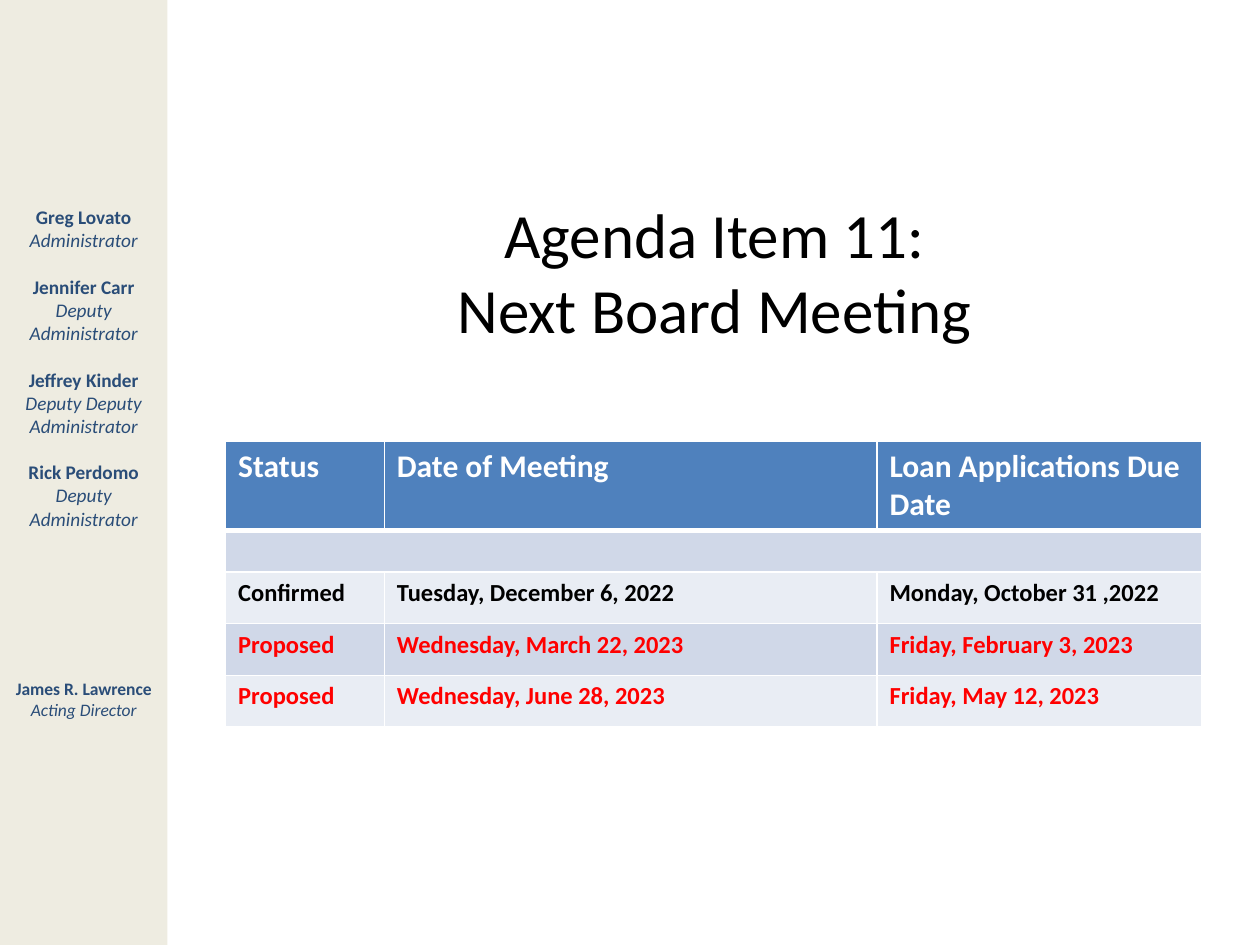
import pptx
import pptx.dml.color
import pptx.enum.text
import pptx.oxml
import pptx.oxml.ns
import pptx.util
from pptx.util import Inches

FONT = "Calibri"
NAVY, WHITE, BLACK, RED = "2A4D78", "FFFFFF", "000000", "FF0000"
HEADER_BLUE, BAND_DARK, BAND_LIGHT = "4F81BD", "D0D8E8", "E9EDF4"
CENTER = pptx.enum.text.PP_ALIGN.CENTER

OFFICERS = [
    ("Greg Lovato", "Administrator"),
    ("Jennifer Carr", "Deputy Administrator"),
    ("Jeffrey Kinder", "Deputy Deputy Administrator"),
    ("Rick Perdomo", "Deputy Administrator"),
]
DIRECTOR = [("James R. Lawrence", "Acting Director")]
MEETINGS = [
    (("Status", "Date of Meeting", "Loan Applications Due Date"), WHITE, HEADER_BLUE),
    (None, BLACK, BAND_DARK),
    (("Confirmed", "Tuesday, December 6, 2022", "Monday, October 31 ,2022"), BLACK, BAND_LIGHT),
    (("Proposed", "Wednesday, March 22, 2023", "Friday, February 3, 2023"), RED, BAND_DARK),
    (("Proposed", "Wednesday, June 28, 2023", "Friday, May 12, 2023"), RED, BAND_LIGHT),
]


def rgb(value):
    return pptx.dml.color.RGBColor.from_string(value)


def write(paragraph, text, color, **formats):
    run = paragraph.add_run()
    run.text = text
    run.font.color.rgb = rgb(color)
    for name, value in {"name": FONT, **formats}.items():
        setattr(run.font, name, value)


def add_frame(slide, box):
    frame = slide.shapes.add_textbox(*map(Inches, box)).text_frame
    frame.word_wrap = True
    return frame


def next_paragraph(frame, index):
    paragraph = frame.add_paragraph() if index else frame.paragraphs[0]
    paragraph.alignment = CENTER
    return paragraph


def add_title(slide, box, lines):
    frame = add_frame(slide, box)
    for index, line in enumerate(lines):
        write(next_paragraph(frame, index), line, BLACK, size=pptx.util.Pt(36))


def add_people(slide, box, people, points):
    frame = add_frame(slide, box)
    size = pptx.util.Pt(points)
    for index, (person, role) in enumerate(people):
        heading = next_paragraph(frame, index)
        if index:
            heading.space_before = pptx.util.Pt(13.4)
        write(heading, person, NAVY, size=size, bold=True)
        write(next_paragraph(frame, True), role, NAVY, size=size, italic=True)


def add_sidebar(slide, box):
    left, top, width, height = box
    panel = slide.shapes.add_shape(
        pptx.enum.shapes.MSO_SHAPE.RECTANGLE, *map(Inches, box))
    panel.shadow.inherit = False
    panel.fill.solid()
    panel.fill.fore_color.rgb = rgb("EEECE1")
    panel.line.fill.background()
    add_people(slide, (left, top + 5.33, width, 0.45), DIRECTOR, 10)
    add_people(slide, (left, top + 1.58, width, 2.75), OFFICERS, 11)


def set_borders(cell, widths):
    properties = cell._tc.get_or_add_tcPr()
    for side, points in widths.items():
        properties.append(pptx.oxml.parse_xml(
            f'<a:ln{side} {pptx.oxml.ns.nsdecls("a")} w="{pptx.util.Pt(points)}">'
            f'<a:solidFill><a:srgbClr val="{WHITE}"/></a:solidFill></a:ln{side}>'))


def add_meetings(slide, box):
    table = slide.shapes.add_table(len(MEETINGS), 3, *map(Inches, box)).table
    for column, width in zip(table.columns, (1.26, 3.91, 2.58)):
        column.width = Inches(width)
    for row, height in zip(table.rows, (0.71, 0.33, 0.41, 0.41, 0.41)):
        row.height = Inches(height)
    for index, (texts, color, fill) in enumerate(MEETINGS):
        cells = list(table.rows[index].cells)
        for cell in cells:
            set_borders(cell, {"L": 1, "R": 1, "T": 3 if index == 1 else 1,
                               "B": 1 if index else 3})
            cell.fill.solid()
            cell.fill.fore_color.rgb = rgb(fill)
        if texts is None:
            for cell in cells:
                cell.margin_top = cell.margin_bottom = 0
            cells[0].merge(cells[-1])
            continue
        for cell, text in zip(cells, texts):
            write(cell.text_frame.paragraphs[0], text, color, bold=True,
                  size=pptx.util.Pt(14 if index else 18))


def main():
    presentation = pptx.Presentation()
    presentation.slide_width = Inches(10)
    presentation.slide_height = Inches(7.5)
    slide = presentation.slides.add_slide(presentation.slide_layouts[6])
    add_title(slide, (2.17, 1.5, 7, 2.25), ("Agenda Item 11:", "Next Board Meeting"))
    add_meetings(slide, (1.79, 3.5, 7.75, 2.27))
    add_sidebar(slide, (0, 0, 1.33, 7.5))
    presentation.save("out.pptx")


if __name__ == "__main__":
    main()
